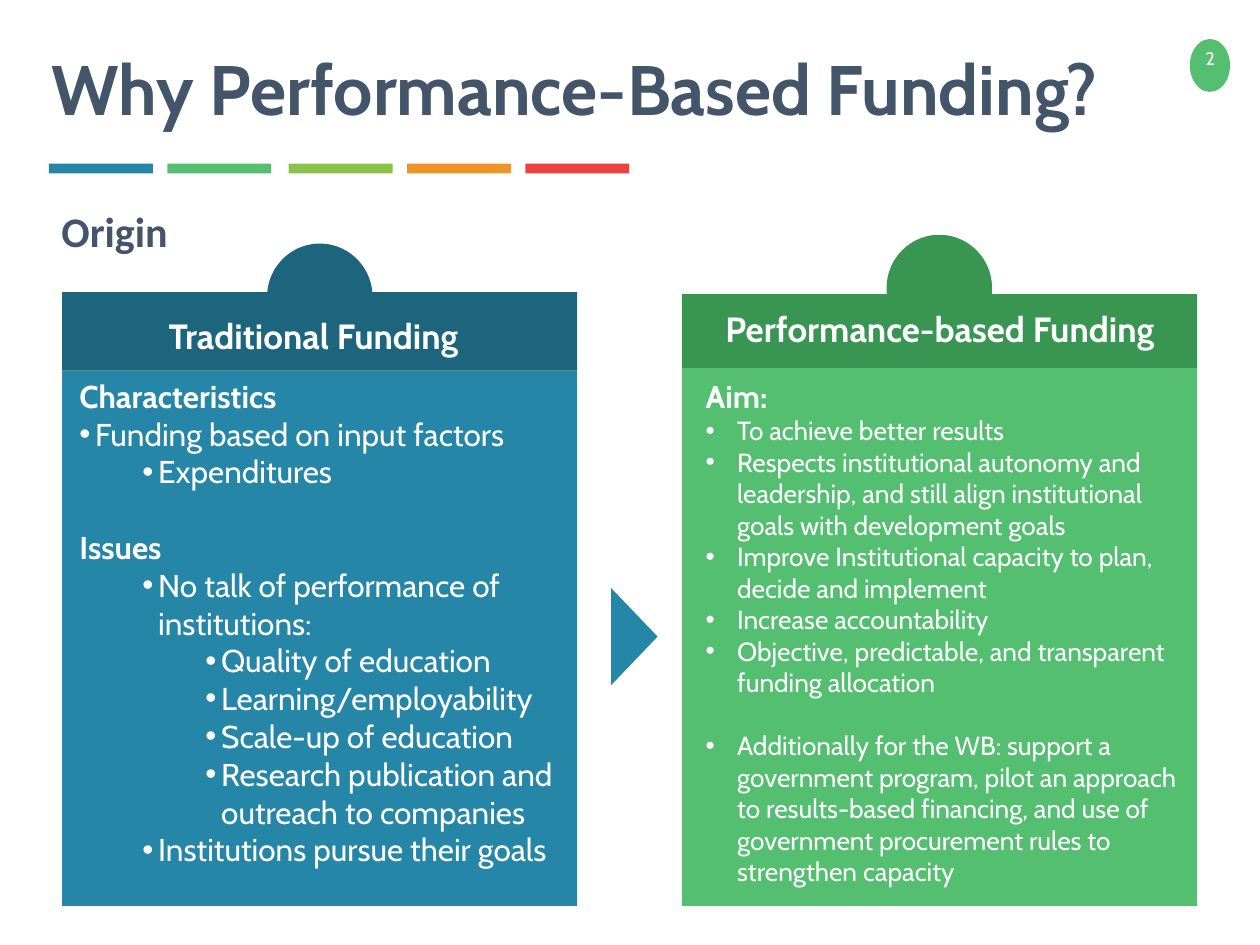
from lxml.etree import SubElement
from pptx import Presentation
from pptx.dml.color import RGBColor
from pptx.enum.shapes import MSO_SHAPE as Shape
from pptx.enum.text import MSO_ANCHOR as Anchor, MSO_AUTO_SIZE as AutoSize, PP_ALIGN as Align
from pptx.oxml.ns import qn
from pptx.util import Pt

BLUE = RGBColor(0x26, 0x86, 0xA7)
DARK_BLUE = RGBColor(0x1C, 0x65, 0x7D)
GREEN = RGBColor(0x54, 0xBE, 0x71)
DARK_GREEN = RGBColor(0x39, 0x95, 0x52)
LIME = RGBColor(0x8B, 0xC2, 0x48)
ORANGE = RGBColor(0xEF, 0x95, 0x27)
RED = RGBColor(0xED, 0x42, 0x3D)
SLATE = RGBColor(0x44, 0x54, 0x69)
WHITE = RGBColor(0xFF, 0xFF, 0xFF)

# Each list item: text, level (None for a heading), space before in points
TRADITIONAL = [
    ("Characteristics", None, 0),
    ("Funding based on input factors", 0, 0),
    ("Expenditures", 1, 0),
    ("Issues", None, 21.6),
    ("No talk of performance of institutions:", 1, 0),
    ("Quality of education", 2, 0),
    ("Learning/employability", 2, 0),
    ("Scale-up of education", 2, 0),
    ("Research publication and outreach to companies", 2, 0),
    ("Institutions pursue their goals", 1, 0),
]
PERFORMANCE = [
    ("Aim:", None, 0),
    ("To achieve better results", 0, 0),
    ("Respects institutional autonomy and leadership, and still align "
     "institutional goals with development goals", 0, 0),
    ("Improve Institutional capacity to plan, decide and implement", 0, 0),
    ("Increase accountability", 0, 0),
    ("Objective, predictable, and transparent funding allocation", 0, 0),
    ("Additionally for the WB: support a government program, pilot an "
     "approach to results-based financing, and use of government "
     "procurement rules to strengthen capacity", 0, 18),
]


def write(p, text, size=18, color=WHITE, bold=False, font="Cabin", align=Align.LEFT):
    p.alignment = align
    r = p.add_run()
    r.text = text
    r.font.name, r.font.size, r.font.bold = font, Pt(size), bold
    r.font.color.rgb = color


class Deck:
    def __init__(self, prs):
        self.s = prs.slides.add_slide(prs.slide_layouts[3])

    def paint(self, sp, color):
        sp.shadow.inherit = False
        sp.fill.solid()
        sp.fill.fore_color.rgb = color
        sp.line.fill.background()

    def shape(self, kind, x, y, w, h, color):
        sp = self.s.shapes.add_shape(kind, Pt(x), Pt(y), Pt(w), Pt(h))
        self.paint(sp, color)

    def polygon(self, points, color):
        start, *rest = [(Pt(x), Pt(y)) for x, y in points]
        builder = self.s.shapes.build_freeform(*start)
        builder.add_line_segments(rest, close=True)
        self.paint(builder.convert_to_shape(), color)

    def text(self, text, x, y, w, h, inset=(0, 0), **style):
        sp = self.s.shapes.add_textbox(Pt(x), Pt(y), Pt(w), Pt(h))
        tf = sp.text_frame
        tf.word_wrap = True
        tf.margin_left = tf.margin_right = Pt(inset[0])
        tf.margin_top = tf.margin_bottom = Pt(inset[1])
        write(tf.paragraphs[0], text, **style)

    def placeholder(self, index, x, y, w, h):
        """Move a placeholder, bring it to the front and return its text frame."""
        sp = self.s.placeholders[index]
        sp.left, sp.top, sp.width, sp.height = Pt(x), Pt(y), Pt(w), Pt(h)
        sp.element.getparent().append(sp.element)
        tf = sp.text_frame
        tf.auto_size, tf.vertical_anchor, tf.word_wrap = AutoSize.NONE, Anchor.TOP, True
        return tf

    def title(self, text, *box, **style):
        write(self.placeholder(0, *box).paragraphs[0], text, **style)

    def bullets(self, index, items, *box, hang=9, size=18):
        tf = self.placeholder(index, *box)
        for i, (text, level, gap) in enumerate(items):
            p = tf.add_paragraph() if i else tf.paragraphs[0]
            heading = level is None
            p.level = level or 0
            p.space_before = Pt(gap)
            write(p, text, size=18 if heading else size, bold=heading)
            pPr = p._p.get_or_add_pPr()
            pPr.set("marL", str(0 if heading else Pt(hang + 36 * level)))
            pPr.set("indent", str(0 if heading else -Pt(hang)))
            if heading:
                SubElement(pPr, qn("a:buNone"))
            else:
                SubElement(pPr, qn("a:buChar"), char="•")

    def panel(self, x, top, body_bottom, split, knob, color, dark):
        """Card with a knob behind its darker header band."""
        self.shape(Shape.OVAL, *knob, 60.3, 61, dark)
        self.shape(Shape.RECTANGLE, x, split, 294.4, body_bottom - split, color)
        self.shape(Shape.RECTANGLE, x, top, 294.4, split - top, dark)


def main():
    prs = Presentation()
    prs.slide_width, prs.slide_height = Pt(720), Pt(540)
    deck = Deck(prs)

    # Page number
    deck.shape(Shape.OVAL, 679.9, 22.3, 23, 30.2, GREEN)
    deck.text("2", 680.4, 23.8, 22.3, 18, inset=(5, 3), size=10.5, align=Align.CENTER)

    # Title and colour bars
    deck.title("Why Performance-Based Funding?", 22.3, 22.3, 630, 55.4,
               size=40, color=SLATE, bold=True)
    for x, color in zip((28, 95.6, 165, 232.6, 300.2), (BLUE, GREEN, LIME, ORANGE, RED)):
        deck.shape(Shape.RECTANGLE, x, 93.5, 59.4, 5.6, color)
    deck.text("Origin", 28, 113.8, 80, 36, inset=(7.2, 3.6),
              size=24, color=SLATE, bold=True, font="Calibri")

    # Performance-based funding
    deck.panel(389.7, 168, 517.7, 210.2, (506.6, 134.2), GREEN, DARK_GREEN)
    deck.text("Performance-based Funding", 410.4, 175.7, 253.4, 24.5,
              size=20, bold=True, align=Align.CENTER)
    deck.bullets(2, PERFORMANCE, 396, 211.7, 288, 306, hang=18, size=15)

    # Traditional funding
    deck.panel(35.5, 166.9, 517.7, 211.8, (152.6, 139.2), BLUE, DARK_BLUE)
    deck.text("Traditional Funding", 90.7, 180, 177, 24.5,
              size=20, bold=True, align=Align.CENTER)
    deck.bullets(1, TRADITIONAL, 38.2, 211.7, 301.7, 291)

    # Arrow from old to new
    deck.polygon([(349.2, 391.6), (375.8, 363.8), (349.2, 336)], BLUE)

    prs.save("out.pptx")


if __name__ == "__main__":
    main()
